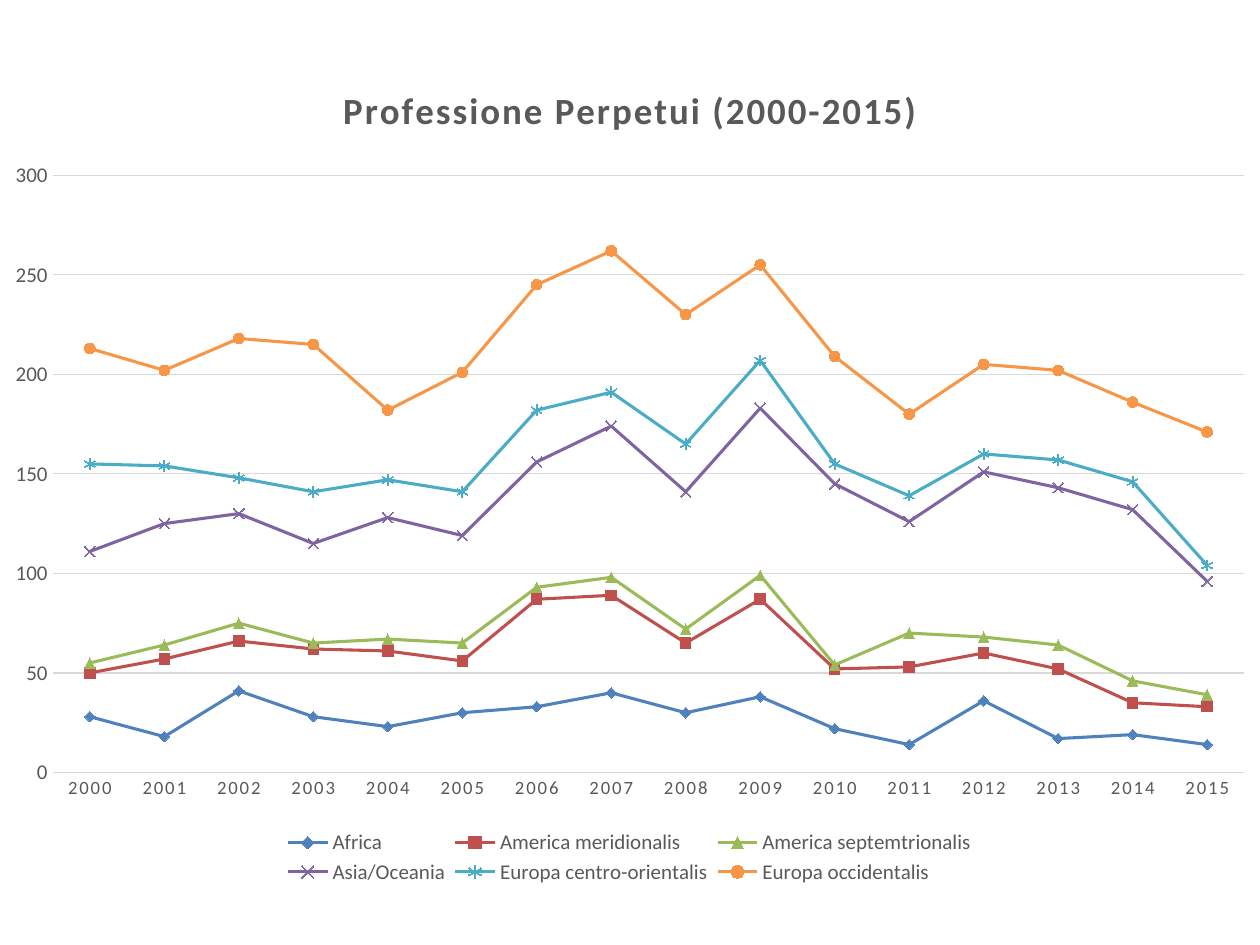
"""Build a slide with a stacked line chart of perpetual professions by region."""
from pptx import Presentation
from pptx.chart.data import CategoryChartData
from pptx.dml.color import RGBColor
from pptx.enum.chart import XL_CHART_TYPE, XL_LEGEND_POSITION, XL_MARKER_STYLE, XL_TICK_MARK
from pptx.oxml import parse_xml
from pptx.oxml.ns import nsdecls, qn
from pptx.util import Inches, Pt

STACKED_LINES = XL_CHART_TYPE.LINE_MARKERS_STACKED
BOTTOM = XL_LEGEND_POSITION.BOTTOM
NO_TICK = XL_TICK_MARK.NONE
DIAMOND, SQUARE, TRIANGLE = XL_MARKER_STYLE.DIAMOND, XL_MARKER_STYLE.SQUARE, XL_MARKER_STYLE.TRIANGLE
CROSS, STAR, CIRCLE = XL_MARKER_STYLE.X, XL_MARKER_STYLE.STAR, XL_MARKER_STYLE.CIRCLE

COLORS = {
    "text": "595959", "grid": "D9D9D9",
    "Africa": "4F81BD", "America meridionalis": "C0504D",
    "America septemtrionalis": "9BBB59", "Asia/Oceania": "8064A2",
    "Europa centro-orientalis": "4BACC6", "Europa occidentalis": "F79646",
}
REGIONS = [
    ("Africa", DIAMOND, [28, 18, 41, 28, 23, 30, 33, 40, 30, 38, 22, 14, 36, 17, 19, 14]),
    ("America meridionalis", SQUARE, [22, 39, 25, 34, 38, 26, 54, 49, 35, 49, 30, 39, 24, 35, 16, 19]),
    ("America septemtrionalis", TRIANGLE, [5, 7, 9, 3, 6, 9, 6, 9, 7, 12, 2, 17, 8, 12, 11, 6]),
    ("Asia/Oceania", CROSS, [56, 61, 55, 50, 61, 54, 63, 76, 69, 84, 91, 56, 83, 79, 86, 57]),
    ("Europa centro-orientalis", STAR, [44, 29, 18, 26, 19, 22, 26, 17, 24, 24, 10, 13, 9, 14, 14, 8]),
    ("Europa occidentalis", CIRCLE, [58, 48, 70, 74, 35, 60, 63, 71, 65, 48, 54, 41, 45, 45, 40, 67]),
]


def style_font(font, size, bold=False):
    font.name, font.size, font.bold = "Calibri", Pt(size), bold
    font.color.rgb = RGBColor.from_string(COLORS["text"])


def place(element, index, target="", **shares):
    for old in element.findall(qn("c:layout")):
        element.remove(old)
    inner = f'<c:layoutTarget val="{target}"/>' if target else ""
    modes = "".join(f'<c:{key}Mode val="edge"/>' for key in "xy")
    values = "".join(f'<c:{key} val="{share}"/>' for key, share in shares.items())
    element.insert(index, parse_xml(
        f'<c:layout {nsdecls("c")}><c:manualLayout>{inner}{modes}{values}'
        "</c:manualLayout></c:layout>"))


deck = Presentation()
deck.slide_width, deck.slide_height = Inches(10), Inches(7.5)
page = deck.slides.add_slide(deck.slide_layouts[6])

chart_data = CategoryChartData()
chart_data.categories = [str(year) for year in range(2000, 2016)]
for region, marker_style, counts in REGIONS:
    chart_data.add_series(region, counts)
chart = page.shapes.add_chart(
    STACKED_LINES, Inches(-0.08), Inches(0.43), Inches(10.15), Inches(6.63), chart_data).chart
style_font(chart.font, 12)

title = chart.chart_title
title.text_frame.text = "Professione Perpetui (2000-2015)"
title_font = title.text_frame.paragraphs[0].runs[0].font
style_font(title_font, 21.1, bold=True)
title_font._element.set("spc", "120")
place(title._element, 1, x=0.271, y=0.029)

chart.has_legend = True
legend = chart.legend
legend.position = BOTTOM
legend.include_in_layout = False
style_font(legend.font, 11.97)
place(legend._element, 1, x=0.225, y=0.924, w=0.55, h=0.075)

plot = chart.plots[0]
place(chart._chartSpace.chart.plotArea, 0, "inner", x=0.049, y=0.145, w=0.932, h=0.715)

years, counts_axis = chart.category_axis, chart.value_axis
for axis, size in ((years, 10.64), (counts_axis, 11.97)):
    axis.major_tick_mark = axis.minor_tick_mark = NO_TICK
    style_font(axis.tick_labels.font, size)
years.tick_labels.font._element.set("spc", "120")
counts_axis.minimum_scale, counts_axis.maximum_scale, counts_axis.major_unit = 0, 300, 50
counts_axis.format.line.fill.background()
counts_axis.has_major_gridlines = True
for line in (years.format.line, counts_axis.major_gridlines.format.line):
    line.color.rgb = RGBColor.from_string(COLORS["grid"])
    line.width = Pt(0.75)

for series, (region, marker_style, counts) in zip(plot.series, REGIONS):
    color = RGBColor.from_string(COLORS[region])
    series.smooth = False
    series.format.line.color.rgb = color
    series.format.line.width = Pt(1.75)
    marker = series.marker
    marker.style, marker.size = marker_style, 6
    marker.format.line.color.rgb = color
    if marker_style in (CROSS, STAR):
        marker.format.fill.background()
    else:
        marker.format.fill.solid()
        marker.format.fill.fore_color.rgb = color

deck.save("out.pptx")
